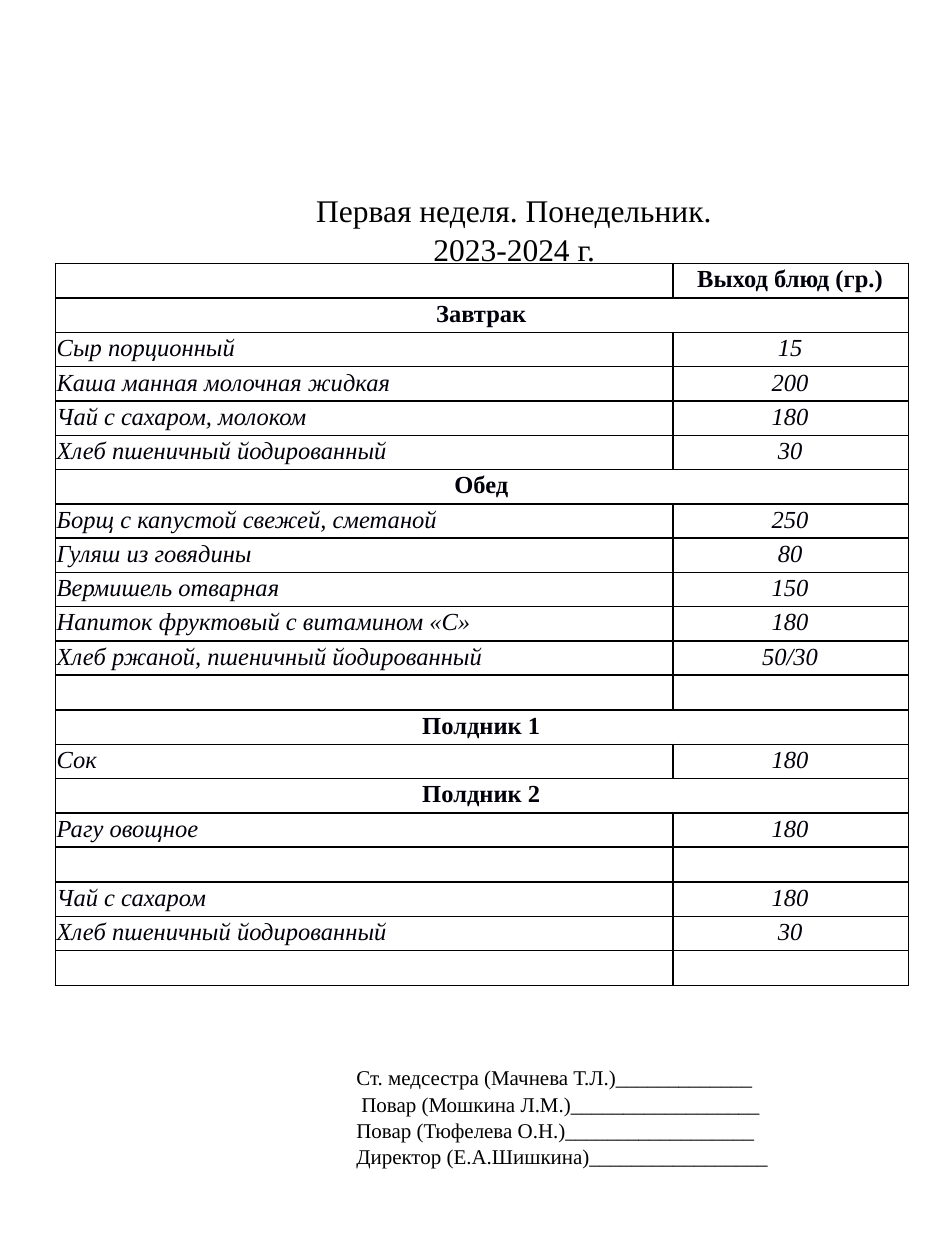
from lxml.etree import SubElement
from pptx import Presentation
from pptx.dml.color import RGBColor
from pptx.enum.text import MSO_ANCHOR, MSO_AUTO_SIZE, PP_ALIGN as Align
from pptx.oxml.ns import qn
from pptx.util import Inches, Pt

BLACK = RGBColor(0x00, 0x00, 0x00)
CELL_INK = RGBColor(0x00, 0x00, 0x0A)
BORDER = RGBColor(0x00, 0x00, 0x01)
FONT = "Times New Roman"
CELL_SIZE = Pt(14)

# Each entry is (text, left indent in inches).
TITLE = [("Первая неделя. Понедельник.", 0), ("2023-2024 г.", 0.93)]
SIGNATURES = [
    ("Ст. медсестра (Мачнева Т.Л.)_____________", 0),
    ("Повар (Мошкина Л.М.)__________________", 0.04),
    ("Повар (Тюфелева О.Н.)__________________", 0),
    ("Директор (Е.А.Шишкина)_________________", 0),
]

# A row with one entry is a meal heading across both columns.
MENU = [
    ("", "Выход блюд (гр.)"),
    ("Завтрак",),
    ("Сыр порционный", "15"),
    ("Каша манная молочная жидкая", "200"),
    ("Чай с сахаром, молоком", "180"),
    ("Хлеб пшеничный йодированный", "30"),
    ("Обед",),
    ("Борщ с капустой свежей, сметаной", "250"),
    ("Гуляш из говядины", "80"),
    ("Вермишель отварная", "150"),
    ("Напиток фруктовый с витамином «С»", "180"),
    ("Хлеб ржаной, пшеничный йодированный", "50/30"),
    ("", ""),
    ("Полдник 1",),
    ("Сок", "180"),
    ("Полдник 2",),
    ("Рагу овощное", "180"),
    ("", ""),
    ("Чай с сахаром", "180"),
    ("Хлеб пшеничный йодированный", "30"),
    ("", ""),
]


def add_span(para, text, size, color, bold=False):
    span = para.add_run()
    span.text = text
    font = span.font
    font.name, font.size, font.bold = FONT, size, bold
    font.color.rgb = color
    return span


def write_lines(box, lines, size, spacing):
    frame = box.text_frame
    frame.word_wrap = True
    frame.auto_size = MSO_AUTO_SIZE.NONE
    frame.vertical_anchor = MSO_ANCHOR.TOP
    for number, (text, indent) in enumerate(lines):
        para = frame.add_paragraph() if number else frame.paragraphs[0]
        para.alignment = Align.LEFT
        para.line_spacing = spacing
        properties = para._p.get_or_add_pPr()
        properties.set("marL", str(Inches(indent)))
        properties.set("indent", "0")
        add_span(para, text, size, BLACK)


def add_title(page):
    title = page.shapes.title
    title.left, title.top = Inches(2.41), Inches(1.46)
    title.width, title.height = Inches(4.41), Inches(1.01)
    write_lines(title, TITLE, Pt(18), 1.02)


def add_signatures(page):
    box = page.shapes.add_textbox(
        Inches(2.73), Inches(8.39), Inches(3.94), Inches(1.21))
    write_lines(box, SIGNATURES, Pt(12), 1.05)


def frame_cell(cell):
    """Clear the fill and draw a thin line on all four sides."""
    properties = cell._tc.get_or_add_tcPr()
    for side in ("lnL", "lnR", "lnT", "lnB"):
        line = SubElement(properties, qn(f"a:{side}"), w=str(Pt(1)))
        fill = SubElement(line, qn("a:solidFill"))
        SubElement(fill, qn("a:srgbClr"), val=str(BORDER))
    cell.fill.background()
    cell.margin_left = Inches(0.01)
    cell.margin_right = cell.margin_top = cell.margin_bottom = Inches(0.02)


def write_cell(cell, text, align, bold):
    para = cell.text_frame.paragraphs[0]
    para.alignment = align
    if text:
        span = add_span(para, text, CELL_SIZE, CELL_INK, bold)
        span.font.italic = not bold
    else:
        # Keeps an empty cell from growing to the default text size.
        SubElement(para._p, qn("a:endParaRPr"), sz=str(int(CELL_SIZE.pt * 100)))


def add_menu(page):
    height = Inches(5.72)
    table = page.shapes.add_table(
        len(MENU), 2, Inches(0.44), Inches(2.09), Inches(6.77), height).table
    table.first_row = table.horz_banding = False
    for column, width in zip(table.columns, (4.9, 1.87)):
        column.width = Inches(width)
    for number, entries in enumerate(MENU):
        table.rows[number].height = height // len(MENU)
        cells = [table.cell(number, column) for column in range(2)]
        for cell in cells:
            frame_cell(cell)
        is_heading = len(entries) == 1
        if is_heading:
            cells[0].merge(cells[1])
        bold = is_heading or number == 0
        aligns = (Align.CENTER if is_heading else Align.LEFT, Align.CENTER)
        for cell, text, align in zip(cells, entries, aligns):
            write_cell(cell, text, align, bold)


def main():
    deck = Presentation()
    deck.slide_width, deck.slide_height = Inches(7.5), Inches(10)
    page = deck.slides.add_slide(deck.slide_layouts[5])
    add_title(page)
    add_menu(page)
    add_signatures(page)
    deck.save("out.pptx")


if __name__ == "__main__":
    main()
